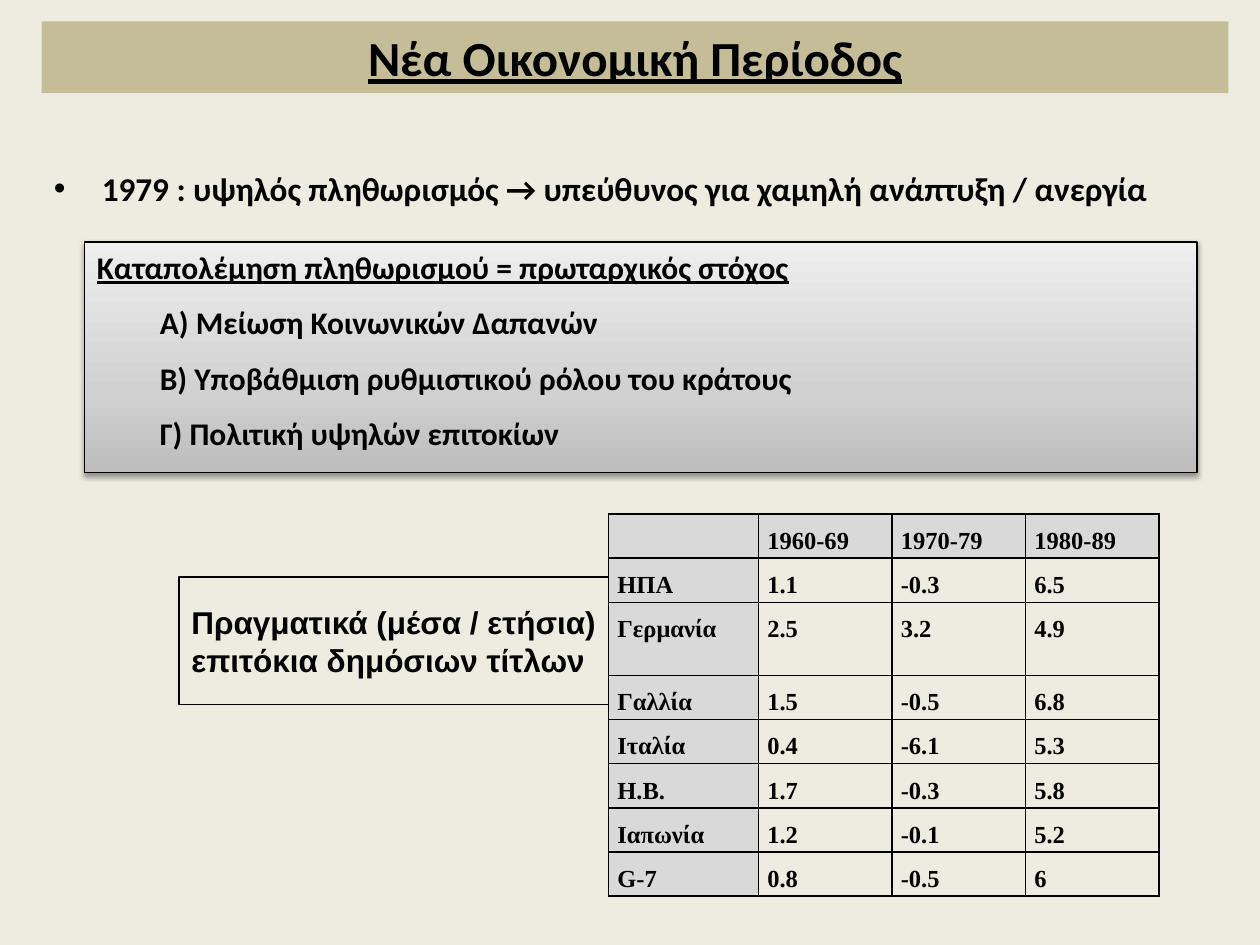
import pptx
import pptx.util
import pptx.oxml
import pptx.dml.color
import pptx.enum.shapes
import pptx.enum.text
import copy
from lxml import etree

Inches = pptx.util.Inches
Pt = pptx.util.Pt
RGB = pptx.dml.color.RGBColor.from_string
ANCHOR = pptx.enum.text.MSO_ANCHOR
RECTANGLE = pptx.enum.shapes.MSO_SHAPE.RECTANGLE
NAMESPACE = 'xmlns:a="http://schemas.openxmlformats.org/drawingml/2006/main"'

COLORS = {
    "background": "EEECE1",
    "title": "C4BD97",
    "header": "D9D9D9",
    "text": "000000",
    "gradient_bottom": "BDBDBD",
    "gradient_middle": "D1D1D1",
    "gradient_top": "EEEEEE",
}


def format_paragraph(paragraph, font_name, size, underline=False):
    for run in paragraph.runs:
        run.font.name = font_name
        run.font.size = Pt(size)
        run.font.bold = True
        run.font.underline = underline
        run.font.color.rgb = RGB(COLORS["text"])


def add_box(slide, left, top, width, height, text, outlined=True):
    shape = slide.shapes.add_shape(
        RECTANGLE, Inches(left), Inches(top), Inches(width), Inches(height))
    shape.shadow.inherit = False
    shape.fill.background()
    if outlined:
        shape.line.color.rgb = RGB(COLORS["text"])
        shape.line.width = Pt(0.75)
    else:
        shape.line.fill.background()
    shape.text_frame.word_wrap = True
    shape.text_frame.vertical_anchor = ANCHOR.TOP
    shape.text_frame.text = text
    for paragraph in shape.text_frame.paragraphs:
        paragraph.alignment = pptx.enum.text.PP_ALIGN.LEFT
    return shape


presentation = pptx.Presentation()
presentation.slide_width = Inches(10)
presentation.slide_height = Inches(7.5)
slide = presentation.slides.add_slide(presentation.slide_layouts[6])
slide.background.fill.solid()
slide.background.fill.fore_color.rgb = RGB(COLORS["background"])

# Bullet line
bullet_box = slide.shapes.add_textbox(Inches(0.33), Inches(1.08), Inches(9.17), Inches(0.83))
bullet_box.text_frame.word_wrap = True
bullet_box.text_frame.vertical_anchor = ANCHOR.MIDDLE
bullet_box.text_frame.text = "1979 : υψηλός πληθωρισμός → υπεύθυνος για χαμηλή ανάπτυξη / ανεργία"
paragraph = bullet_box.text_frame.paragraphs[0]
properties = paragraph._p.get_or_add_pPr()
properties.set("marL", str(Inches(0.38)))
properties.set("indent", str(Inches(-0.38)))
properties.append(pptx.oxml.parse_xml(f'<a:buFont {NAMESPACE} typeface="Arial"/>'))
properties.append(pptx.oxml.parse_xml(f'<a:buChar {NAMESPACE} char="•"/>'))
format_paragraph(paragraph, "Calibri", 19)

# Policy box with gradient and shadow
policy_box = add_box(
    slide, 0.67, 1.92, 8.83, 1.83,
    "Καταπολέμηση πληθωρισμού = πρωταρχικός στόχος\n"
    "Α) Μείωση Κοινωνικών Δαπανών\n"
    "Β) Υποβάθμιση ρυθμιστικού ρόλου του κράτους\n"
    "Γ) Πολιτική υψηλών επιτοκίων")
policy_box.fill.gradient()
policy_box.fill.gradient_angle = 90
first_stop = policy_box.fill.gradient_stops[0]._gs
first_stop.addnext(copy.deepcopy(first_stop))
gradient = [(0, "gradient_bottom"), (0.35, "gradient_middle"), (1, "gradient_top")]
for stop, (position, color) in zip(policy_box.fill.gradient_stops, gradient):
    stop.position = position
    stop.color.rgb = RGB(COLORS[color])
effects = policy_box._element.spPr.find(pptx.oxml.ns.qn("a:effectLst"))
effects.append(pptx.oxml.parse_xml(
    f'<a:outerShdw {NAMESPACE} blurRad="{Pt(3.1)}" dist="{Pt(1.6)}" dir="5400000" rotWithShape="0">'
    f'<a:srgbClr val="{COLORS["text"]}"><a:alpha val="38000"/></a:srgbClr></a:outerShdw>'))
for index, paragraph in enumerate(policy_box.text_frame.paragraphs):
    paragraph.space_after = Pt(10)
    if index > 0:
        paragraph.level = 1
        paragraph._p.get_or_add_pPr().set("marL", str(Inches(0.5)))
    format_paragraph(paragraph, "Calibri", 18, underline=index == 0)

# Title bar
title_bar = add_box(slide, 0.33, 0.17, 9.42, 0.57, "Νέα Οικονομική Περίοδος", outlined=False)
title_bar.fill.solid()
title_bar.fill.fore_color.rgb = RGB(COLORS["title"])
paragraph = title_bar.text_frame.paragraphs[0]
paragraph.alignment = pptx.enum.text.PP_ALIGN.CENTER
paragraph.space_after = Pt(10)
format_paragraph(paragraph, "Calibri", 28, underline=True)

# Table caption
caption = add_box(slide, 1.42, 4.58, 3.42, 1.01,
                  "Πραγματικά (μέσα / ετήσια) επιτόκια δημόσιων τίτλων")
caption.text_frame.vertical_anchor = ANCHOR.MIDDLE
format_paragraph(caption.text_frame.paragraphs[0], "Arial", 18)

# Interest rate table
rates = [
    ["", "1960-69", "1970-79", "1980-89"],
    ["ΗΠΑ", "1.1", "-0.3", "6.5"],
    ["Γερμανία", "2.5", "3.2", "4.9"],
    ["Γαλλία", "1.5", "-0.5", "6.8"],
    ["Ιταλία", "0.4", "-6.1", "5.3"],
    ["Η.Β.", "1.7", "-0.3", "5.8"],
    ["Ιαπωνία", "1.2", "-0.1", "5.2"],
    ["G-7", "0.8", "-0.5", "6"],
]
table = slide.shapes.add_table(
    len(rates), len(rates[0]), Inches(4.83), Inches(4.08), Inches(4.37), Inches(2.82)).table
table.first_row = False
table.horz_banding = False
for index, column in enumerate(table.columns):
    column.width = Inches(1.19 if index == 0 else 1.06)
for index, row in enumerate(table.rows):
    row.height = Inches(0.58 if index == 2 else 0.32)

for row_index, values in enumerate(rates):
    for column_index, value in enumerate(values):
        cell = table.cell(row_index, column_index)
        cell.margin_left = cell.margin_right = Inches(0.07)
        cell.margin_top = cell.margin_bottom = 0
        cell.text_frame.text = value
        paragraph = cell.text_frame.paragraphs[0]
        paragraph.line_spacing = 1.5
        format_paragraph(paragraph, "Times New Roman", 14)
        cell_properties = cell._tc.get_or_add_tcPr()
        for side in ("lnL", "lnR", "lnT", "lnB"):
            border = etree.SubElement(cell_properties, pptx.oxml.ns.qn(f"a:{side}"), w=str(Pt(1)))
            border_fill = etree.SubElement(border, pptx.oxml.ns.qn("a:solidFill"))
            etree.SubElement(border_fill, pptx.oxml.ns.qn("a:srgbClr"), val=COLORS["text"])
        if row_index == 0 or column_index == 0:
            cell.fill.solid()
            cell.fill.fore_color.rgb = RGB(COLORS["header"])
        else:
            cell.fill.background()

presentation.save("out.pptx")
